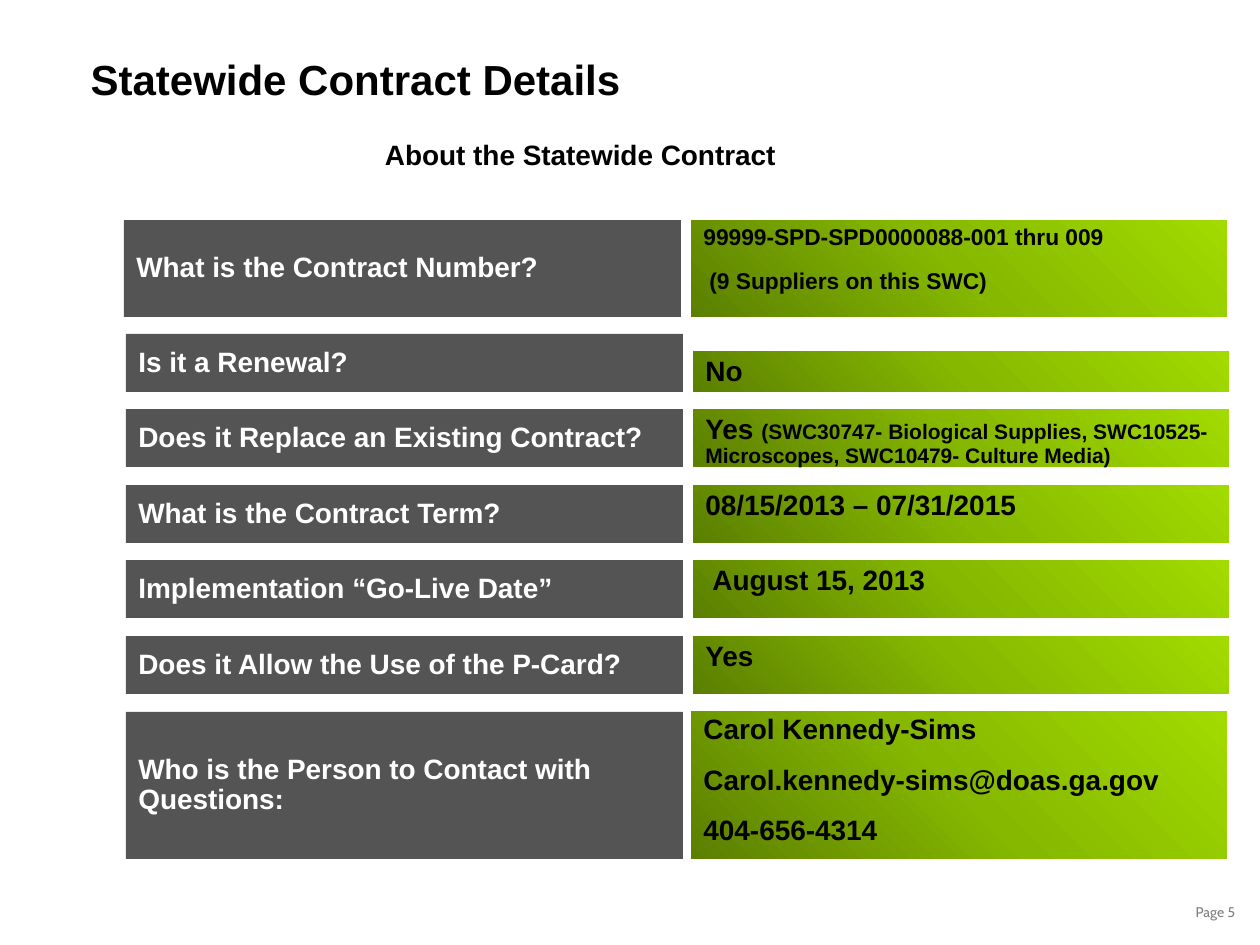
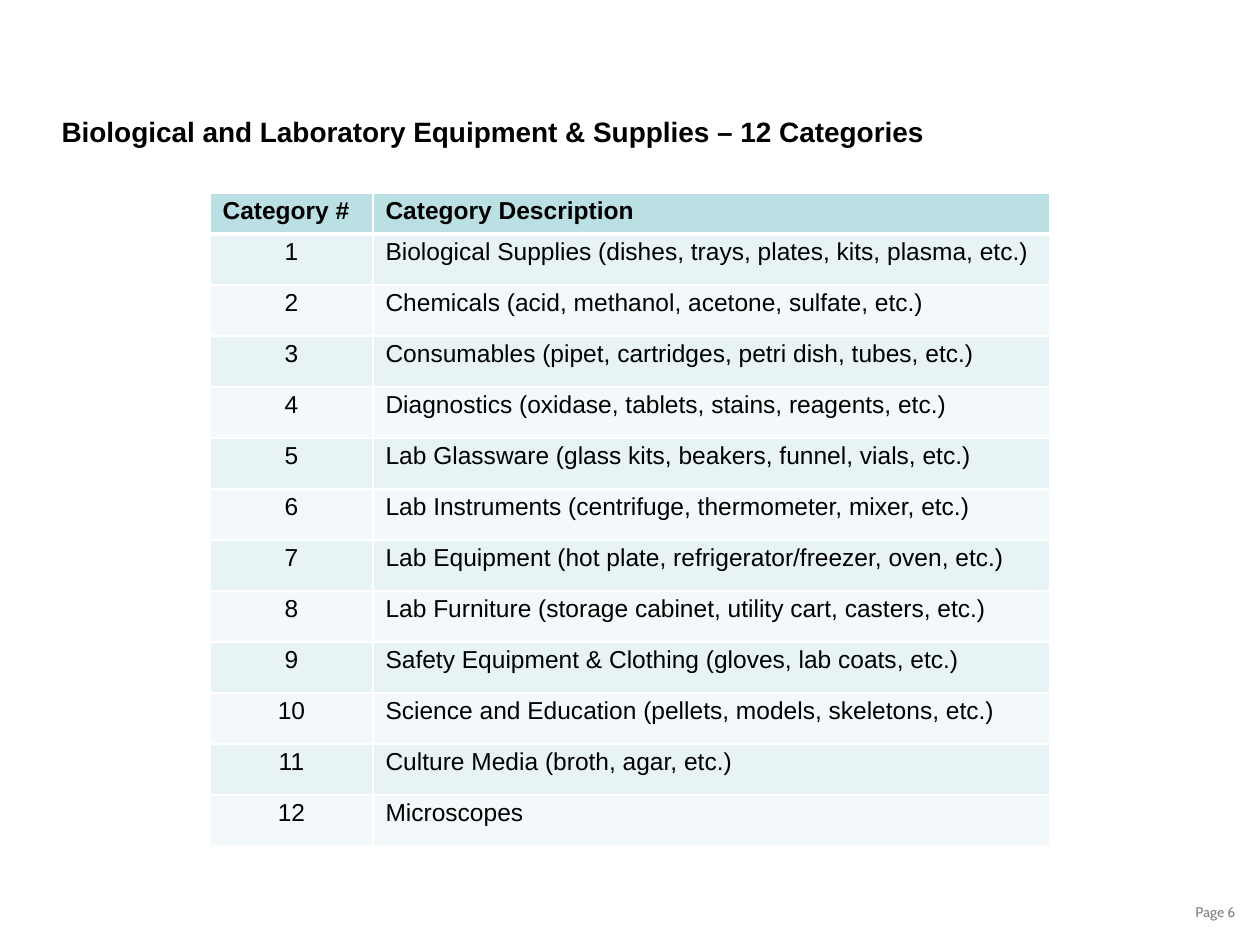
from copy import deepcopy
from dataclasses import dataclass

from lxml.etree import SubElement
from pptx import Presentation
from pptx.dml.color import RGBColor
from pptx.enum.shapes import MSO_SHAPE
from pptx.enum.text import MSO_ANCHOR, MSO_AUTO_SIZE, PP_ALIGN
from pptx.oxml.ns import qn
from pptx.util import Emu, Pt


@dataclass(frozen=True)
class Theme:
    font: str = "Arial"
    footer_font: str = "Cabin"
    ink: str = "000000"
    paper: str = "FFFFFF"
    footer: str = "808080"
    greens: tuple = ("5B7F00", "86B800", "A1DB00")
    header: str = "BBE0E3"
    bands: tuple = ("E7F3F4", "F3F9FA")
    title_size: int = 24
    heading_size: int = 16
    table_size: int = 14
    number_size: int = 13
    note_size: int = 12
    footer_size: int = 8
    label_alpha: int = 67
    tight: float = 0.9


THEME = Theme()
PX_PER_INCH = 126
PAGE_WIDTH, PAGE_HEIGHT = 1260, 945
TITLE_ONLY = 5

# Contract rows: question, answer paragraphs, answer format
CONTRACT_ROWS = [
    ("What is the Contract Number?",
     ["99999-SPD-SPD0000088-001 thru 009", "(9 Suppliers on this SWC)"],
     {"size": THEME.number_size, "gap": 11, "indents": (0, 6)}),
    ("Is it a Renewal?", ["No"], {}),
    ("Does it Replace an Existing Contract?", ["Yes "],
     {"note": "(SWC30747- Biological Supplies, SWC10525-Microscopes, "
              "SWC10479- Culture Media)"}),
    ("What is the Contract Term?", ["08/15/2013 – 07/31/2015"], {}),
    ("Implementation “Go-Live Date”", ["August 15, 2013"], {"indents": (7,)}),
    ("Does it Allow the Use of the P-Card?", ["Yes"], {}),
    ("Who is the Person to Contact with Questions:",
     ["Carol Kennedy-Sims", "Carol.kennedy-sims@doas.ga.gov", "404-656-4314"],
     {"gap": 13.5, "spacing": 0.8}),
]
ROW_TOPS = [220] + [334 + step * 378 // 5 for step in range(6)]
ROW_HEIGHTS = [97] + [58] * 5 + [147]
LABEL_LEFTS = [124] + [126] * 6
ANSWER_LEFTS = [691] + [693] * 5 + [691]
LABEL_WIDTH, ANSWER_WIDTH = 557, 536
ANSWER_DROPS = {1: 17}

CATEGORIES = [
    "Biological Supplies (dishes, trays, plates, kits, plasma, etc.)",
    "Chemicals (acid, methanol, acetone, sulfate, etc.)",
    "Consumables (pipet, cartridges, petri dish, tubes, etc.)",
    "Diagnostics (oxidase, tablets, stains, reagents, etc.)",
    "Lab Glassware (glass kits, beakers, funnel, vials, etc.)",
    "Lab Instruments (centrifuge, thermometer, mixer, etc.)",
    "Lab Equipment (hot plate, refrigerator/freezer, oven, etc.)",
    "Lab Furniture (storage cabinet, utility cart, casters, etc.)",
    "Safety Equipment & Clothing (gloves, lab coats, etc.)",
    "Science and Education (pellets, models, skeletons, etc.)",
    "Culture Media (broth, agar, etc.)",
    "Microscopes",
]


def px(length):
    return Emu(round(length * 914400 / PX_PER_INCH))


def rgb(value):
    return RGBColor.from_string(value)


# Text
def write_text(frame, text, *, size=THEME.heading_size, color=THEME.ink, bold=True,
               font=THEME.font, align=PP_ALIGN.LEFT, spacing=THEME.tight,
               gap=0, indent=0, note=""):
    """Write one paragraph, with an optional smaller note after it."""
    para = frame.add_paragraph() if frame.text else frame.paragraphs[0]
    para.alignment = align
    para.line_spacing = spacing
    para.space_before = Pt(gap)
    if indent:
        properties = para._p.get_or_add_pPr()
        properties.set("marL", str(px(indent)))
        properties.set("indent", "0")
    for words, points in ((text, size), (note, THEME.note_size)):
        if words:
            span = para.add_run()
            span.text = words
            span.font.name = font
            span.font.size = Pt(points)
            span.font.bold = bold
            span.font.color.rgb = rgb(color)


def add_text_box(page, text, left, top, width, height, **text_format):
    box = page.shapes.add_textbox(px(left), px(top), px(width), px(height))
    box.text_frame.word_wrap = True
    write_text(box.text_frame, text, **text_format)


# Shared page parts
def add_page(deck, number, title, left, top, width, height, **title_format):
    page = deck.slides.add_slide(deck.slide_layouts[TITLE_ONLY])
    box = page.shapes.title
    box.left, box.top, box.width, box.height = map(px, (left, top, width, height))
    box.text_frame.auto_size = MSO_AUTO_SIZE.NONE
    box.text_frame.vertical_anchor = MSO_ANCHOR.TOP
    write_text(box.text_frame, title, **title_format)
    add_text_box(page, f"Page {number}", 1171, 897, 89, 34, size=THEME.footer_size,
                 font=THEME.footer_font, color=THEME.footer, bold=False,
                 align=PP_ALIGN.CENTER, spacing=1.0)
    return page


# Question and answer panels
def add_panel(page, left, top, width, height, anchor):
    box = page.shapes.add_shape(MSO_SHAPE.RECTANGLE, px(left), px(top),
                                px(width), px(height))
    box.shadow.inherit = False
    box.line.fill.background()
    box.text_frame.word_wrap = True
    box.text_frame.vertical_anchor = anchor
    return box


def add_label(page, question, left, top, height):
    box = add_panel(page, left, top, LABEL_WIDTH, height, MSO_ANCHOR.MIDDLE)
    box.fill.solid()
    box.fill.fore_color.rgb = rgb(THEME.ink)
    color = box._element.spPr.find(qn("a:solidFill"))[0]
    SubElement(color, qn("a:alpha"), val=str(THEME.label_alpha * 1000))
    write_text(box.text_frame, question, color=THEME.paper)


def add_answer(page, paragraphs, left, top, height, indents=(), gap=0, **text_format):
    box = add_panel(page, left, top, ANSWER_WIDTH, height, MSO_ANCHOR.TOP)
    fill_green(box)
    for index, text in enumerate(paragraphs):
        write_text(box.text_frame, text, gap=gap if index else 0,
                   indent=indents[index] if indents else 0, **text_format)


def fill_green(box):
    box.fill.gradient()
    box.fill.gradient_angle = 45
    stops = box._element.spPr.find(qn("a:gradFill")).find(qn("a:gsLst"))
    stops.insert(1, deepcopy(stops[0]))
    for index, stop in enumerate(box.fill.gradient_stops):
        stop.position = index / 2
        stop.color.rgb = rgb(THEME.greens[index])


# Category table
def set_borders(cell, bottom=1, top=1):
    properties = cell._tc.get_or_add_tcPr()
    widths = (("a:lnL", 1), ("a:lnR", 1), ("a:lnT", top), ("a:lnB", bottom))
    for position, (side, points) in enumerate(widths):
        line = SubElement(properties, qn(side), w=str(Pt(points)))
        fill = SubElement(line, qn("a:solidFill"))
        SubElement(fill, qn("a:srgbClr"), val=THEME.paper)
        properties.insert(position, line)


def add_category_table(page, left, top, column_widths, header_height, row_height):
    rows = [("Category #", "Category Description")]
    rows += [(str(number), name) for number, name in enumerate(CATEGORIES, 1)]
    height = header_height + row_height * len(CATEGORIES)
    table = page.shapes.add_table(len(rows), 2, px(left), px(top),
                                  px(sum(column_widths)), px(height)).table
    table.first_row = table.horz_banding = False
    for column, width in zip(table.columns, column_widths):
        column.width = px(width)
    for row_index, texts in enumerate(rows):
        is_header = row_index == 0
        table.rows[row_index].height = px(header_height if is_header else row_height)
        for column_index, text in enumerate(texts):
            cell = table.cell(row_index, column_index)
            cell.fill.solid()
            band = THEME.bands[(row_index - 1) % 2]
            cell.fill.fore_color.rgb = rgb(THEME.header if is_header else band)
            set_borders(cell, bottom=3 if is_header else 1,
                        top=3 if row_index == 1 else 1)
            centred = column_index == 0 and not is_header
            write_text(cell.text_frame, text, size=THEME.table_size, bold=is_header,
                       align=PP_ALIGN.CENTER if centred else PP_ALIGN.LEFT)


# Pages
def build_contract_page(deck):
    page = add_page(deck, 5, "Statewide Contract Details", 78, 47, 914, 105,
                    size=THEME.title_size, spacing=1.0)
    add_text_box(page, "About the Statewide Contract", 16, 135, 1129, 111,
                 align=PP_ALIGN.CENTER)
    for index, (question, paragraphs, answer_format) in enumerate(CONTRACT_ROWS):
        top, height = ROW_TOPS[index], ROW_HEIGHTS[index]
        drop = ANSWER_DROPS.get(index, 0)
        add_label(page, question, LABEL_LEFTS[index], top, height)
        add_answer(page, paragraphs, ANSWER_LEFTS[index], top + drop, height - drop,
                   **answer_format)


def build_category_page(deck):
    page = add_page(deck, 6,
                    "Biological and Laboratory Equipment & Supplies – 12 Categories",
                    49, 112, 954, 43)
    add_category_table(page, 210, 193, (163, 677), header_height=41, row_height=51)


def main():
    deck = Presentation()
    deck.slide_width, deck.slide_height = px(PAGE_WIDTH), px(PAGE_HEIGHT)
    build_contract_page(deck)
    build_category_page(deck)
    deck.save("out.pptx")


if __name__ == "__main__":
    main()
